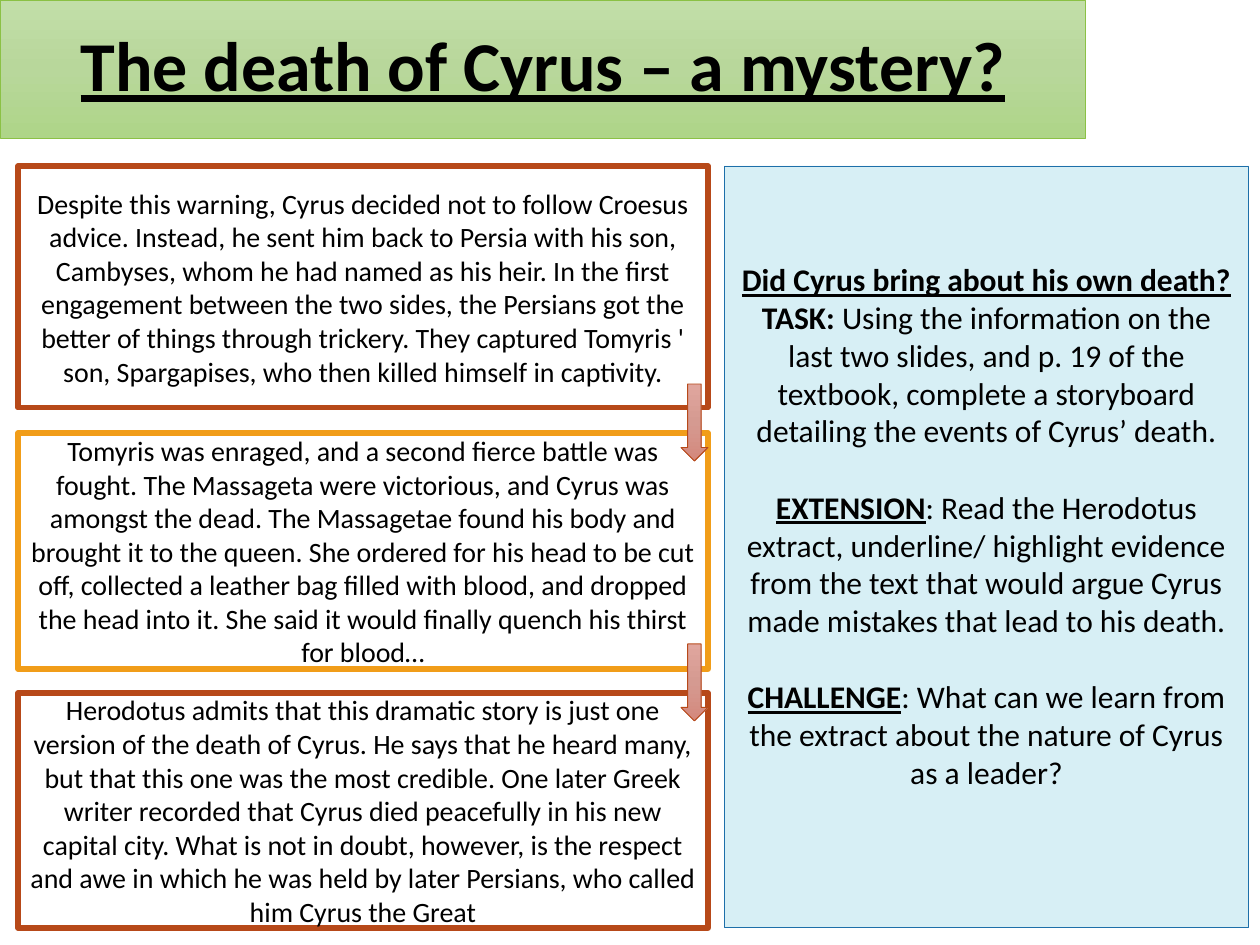
from copy import deepcopy

from pptx import Presentation
from pptx.dml.color import RGBColor
from pptx.enum.shapes import MSO_SHAPE
from pptx.enum.text import MSO_ANCHOR, MSO_AUTO_SIZE, PP_ALIGN
from pptx.oxml.ns import qn
from pptx.util import Emu, Pt

# Content
TITLE = "The death of Cyrus – a mystery?"
EVENTS = [  # text, outline colour, top, height
    ("Despite this warning, Cyrus decided not to follow Croesus advice. Instead, he sent him "
     "back to Persia with his son, Cambyses, whom he had named as his heir. In the first "
     "engagement between the two sides, the Persians got the better of things through "
     "trickery. They captured Tomyris ' son, Spargapises, who then killed himself in "
     "captivity.", "rust", 166, 242),
    ("Tomyris was enraged, and a second fierce battle was fought. The Massageta were "
     "victorious, and Cyrus was amongst the dead. The Massagetae found his body and brought "
     "it to the queen. She ordered for his head to be cut off, collected a leather bag filled "
     "with blood, and dropped the head into it. She said it would finally quench his thirst "
     "for blood…", "orange", 433, 236),
    ("Herodotus admits that this dramatic story is just one version of the death of Cyrus. He "
     "says that he heard many, but that this one was the most credible. One later Greek "
     "writer recorded that Cyrus died peacefully in his new capital city. What is not in "
     "doubt, however, is the respect and awe in which he was held by later Persians, who "
     "called him Cyrus the Great", "rust", 693, 235),
]
TASKS = [  # space before in points, then (text, bold, underlined) spans
    (0, [("Did Cyrus bring about his own death?", True, True)]),
    (0, [("TASK:", True, False),
         (" Using the information on the last two slides, and p. 19 of the textbook, complete "
          "a storyboard detailing the events of Cyrus’ death.", False, False)]),
    (22, [("EXTENSION", True, True),
          (": Read the Herodotus extract, underline/ highlight evidence from the text that "
           "would argue Cyrus made mistakes that lead to his death.", False, False)]),
    (22, [("CHALLENGE", True, True),
          (": What can we learn from the extract about the nature of Cyrus as a leader?",
           False, False)]),
]
COLORS = {
    "black": "000000", "white": "FFFFFF", "rust": "B74919", "orange": "F19D19",
    "green": "8BC145", "pale blue": "D7EFF5", "blue": "1D6FA9",
}
GREEN_FADE = ["C2DEA8", "B8D79B", "AED588"]
RED_FADE = ["E0A69E", "D59A91", "D4887C"]
EVENT_LEFT, EVENT_WIDTH = 18, 690
ARROW_WIDTH, ARROW_HEIGHT, ARROW_RISE = 27, 77, 49


def px(count):
    return Emu(round(count * 914400 / 126))


def color(name):
    return RGBColor.from_string(COLORS[name])


def set_line(shape, name, width):
    shape.line.color.rgb = color(name)
    shape.line.width = Pt(width)


def fade(shape, hexes):
    """Fill a shape from top to bottom with three evenly spaced colours."""
    shape.fill.gradient()
    shape.fill.gradient_angle = 270
    stop_list = shape._element.spPr.find(qn("a:gradFill")).find(qn("a:gsLst"))
    stop_list.append(deepcopy(stop_list[-1]))
    for index, (stop, value) in enumerate(zip(shape.fill.gradient_stops, hexes)):
        stop.position = index / 2
        stop.color.rgb = RGBColor.from_string(value)


def add_shape(kind, left, top, width, height, line, line_width):
    shape = slide.shapes.add_shape(kind, px(left), px(top), px(width), px(height))
    shape.shadow.inherit = False
    set_line(shape, line, line_width)
    return shape


def format_text(para, size):
    para.alignment = PP_ALIGN.CENTER
    para.font.name = "Calibri"
    para.font.size = Pt(size)
    para.font.color.rgb = color("black")


def add_box(left, top, width, height, fill, line, line_width):
    box = add_shape(MSO_SHAPE.RECTANGLE, left, top, width, height, line, line_width)
    box.fill.solid()
    box.fill.fore_color.rgb = color(fill)
    box.text_frame.word_wrap = True
    box.text_frame.vertical_anchor = MSO_ANCHOR.MIDDLE
    return box


deck = Presentation()
deck.slide_width, deck.slide_height = px(1260), px(945)
slide = deck.slides.add_slide(deck.slide_layouts[5])

# Title
title = slide.shapes.title
title.left, title.top, title.width, title.height = px(0), px(0), px(1086), px(138)
fade(title, GREEN_FADE)
set_line(title, "green", 0.5)
frame = title.text_frame
frame.text = TITLE
frame.auto_size = MSO_AUTO_SIZE.NONE
frame.vertical_anchor = MSO_ANCHOR.MIDDLE
para = frame.paragraphs[0]
para.line_spacing = 0.9
format_text(para, 40)
para.font.bold = True
para.font.underline = True

# Story boxes
for text, outline, top, height in EVENTS:
    box = add_box(EVENT_LEFT, top, EVENT_WIDTH, height, "white", outline, 3)
    box.text_frame.text = text
    format_text(box.text_frame.paragraphs[0], 16)

# Arrows leading into each following box
for _, _, top, _ in EVENTS[1:]:
    arrow = add_shape(MSO_SHAPE.DOWN_ARROW, EVENT_LEFT + EVENT_WIDTH - ARROW_WIDTH,
                      top - ARROW_RISE, ARROW_WIDTH, ARROW_HEIGHT, "rust", 0.5)
    fade(arrow, RED_FADE)

# Task panel
panel = add_box(724, 166, 525, 762, "pale blue", "blue", 0.5)
frame = panel.text_frame
frame.margin_bottom = px(49)
for index, (space, spans) in enumerate(TASKS):
    para = frame.add_paragraph() if index else frame.paragraphs[0]
    format_text(para, 18)
    if space:
        para.space_before = Pt(space)
    for text, bold, underlined in spans:
        span = para.add_run()
        span.text = text
        span.font.bold = bold
        span.font.underline = underlined

deck.save("out.pptx")
